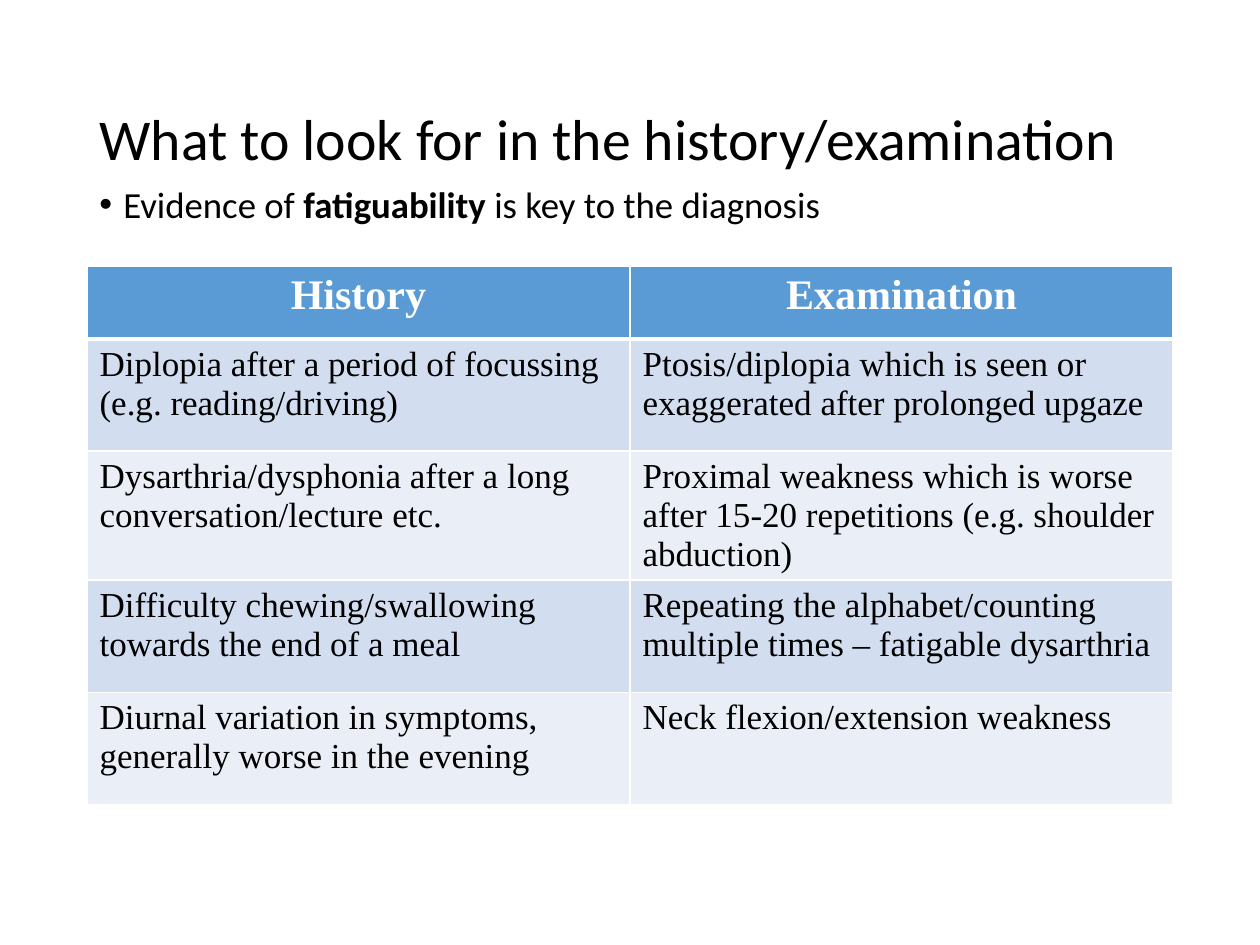
from dataclasses import dataclass

from pptx import Presentation
from pptx.dml.color import RGBColor
from pptx.enum.text import MSO_ANCHOR as Anchor, PP_ALIGN as Align
from pptx.oxml.ns import qn
from pptx.util import Inches, Pt
from lxml.etree import SubElement

COLORS = {
    "text": "000000",
    "white": "FFFFFF",
    "header": "5B9BD5",
    "odd": "D2DEEF",
    "even": "EAEFF7",
}
LEFT, WIDTH = 0.69, 8.62
HEADER_HEIGHT, ROW_HEIGHT = 0.58, 0.89
ROWS = [
    ("History", "Examination"),
    ("Diplopia after a period of focussing (e.g. reading/driving)",
     "Ptosis/diplopia which is seen or exaggerated after prolonged upgaze"),
    ("Dysarthria/dysphonia after a long conversation/lecture etc.",
     "Proximal weakness which is worse after 15-20 repetitions (e.g. shoulder abduction)"),
    ("Difficulty chewing/swallowing towards the end of a meal",
     "Repeating the alphabet/counting multiple times – fatigable dysarthria"),
    ("Diurnal variation in symptoms, generally worse in the evening",
     "Neck flexion/extension weakness"),
]


@dataclass
class Style:
    size: float
    font: str
    color: str = "text"
    bold: bool = False


@dataclass
class TextBlock:
    top: float
    height: float
    size: float
    anchor: Anchor
    runs: list[tuple[str, bool]]
    bullet: bool = False


BLOCKS = [
    TextBlock(0.4, 1.45, 33, Anchor.MIDDLE,
              [("What to look for in the history/examination", False)]),
    TextBlock(1.43, 0.41, 21, Anchor.TOP,
              [("Evidence of ", False), ("fatiguability", True),
               (" is key to the diagnosis", False)], bullet=True),
]


def add_run(p, text: str, style: Style) -> None:
    r = p.add_run()
    r.text = text
    r.font.size = Pt(style.size)
    r.font.name = style.font
    r.font.bold = style.bold
    r.font.color.rgb = RGBColor.from_string(COLORS[style.color])


def add_bullet(p) -> None:
    pPr = p._p.get_or_add_pPr()
    pPr.set("marL", str(Inches(0.19)))
    pPr.set("indent", str(-Inches(0.19)))
    SubElement(pPr, qn("a:buFont"), typeface="Arial")
    SubElement(pPr, qn("a:buChar"), char="•")


def add_text(s, block: TextBlock) -> None:
    box = s.shapes.add_textbox(Inches(LEFT), Inches(block.top),
                               Inches(WIDTH), Inches(block.height))
    tf = box.text_frame
    tf.word_wrap = True
    tf.vertical_anchor = block.anchor
    p = tf.paragraphs[0]
    p.line_spacing = 0.9
    if block.bullet:
        add_bullet(p)
    for text, bold in block.runs:
        add_run(p, text, Style(block.size, "Calibri", bold=bold))


def set_borders(cell, row: int) -> None:
    widths = {"L": 1, "R": 1, "T": 3 if row == 1 else 1, "B": 3 if row == 0 else 1}
    tcPr = cell._tc.get_or_add_tcPr()
    for side, width in widths.items():
        ln = SubElement(tcPr, qn(f"a:ln{side}"), w=str(Pt(width)))
        fill = SubElement(ln, qn("a:solidFill"))
        SubElement(fill, qn("a:srgbClr"), val=COLORS["white"])


def fill_cell(cell, row: int, text: str) -> None:
    set_borders(cell, row)
    band = "header" if row == 0 else "odd" if row % 2 else "even"
    cell.fill.solid()
    cell.fill.fore_color.rgb = RGBColor.from_string(COLORS[band])
    p = cell.text_frame.paragraphs[0]
    if row == 0:
        p.alignment = Align.CENTER
        style = Style(24, "Times New Roman", "white", True)
    else:
        style = Style(20, "Times New Roman")
    add_run(p, text, style)


def add_signs_table(s) -> None:
    heights = [HEADER_HEIGHT] + [ROW_HEIGHT] * (len(ROWS) - 1)
    table = s.shapes.add_table(len(ROWS), 2, Inches(LEFT), Inches(2.11),
                               Inches(WIDTH), Inches(sum(heights))).table
    for i, (height, texts) in enumerate(zip(heights, ROWS)):
        table.rows[i].height = Inches(height)
        for j, text in enumerate(texts):
            fill_cell(table.cell(i, j), i, text)


def main() -> None:
    """Build the slide on history and examination findings."""
    prs = Presentation()
    prs.slide_width, prs.slide_height = Inches(10), Inches(7.5)
    s = prs.slides.add_slide(prs.slide_layouts[6])
    add_signs_table(s)
    for block in BLOCKS:
        add_text(s, block)
    prs.save("out.pptx")


if __name__ == "__main__":
    main()
